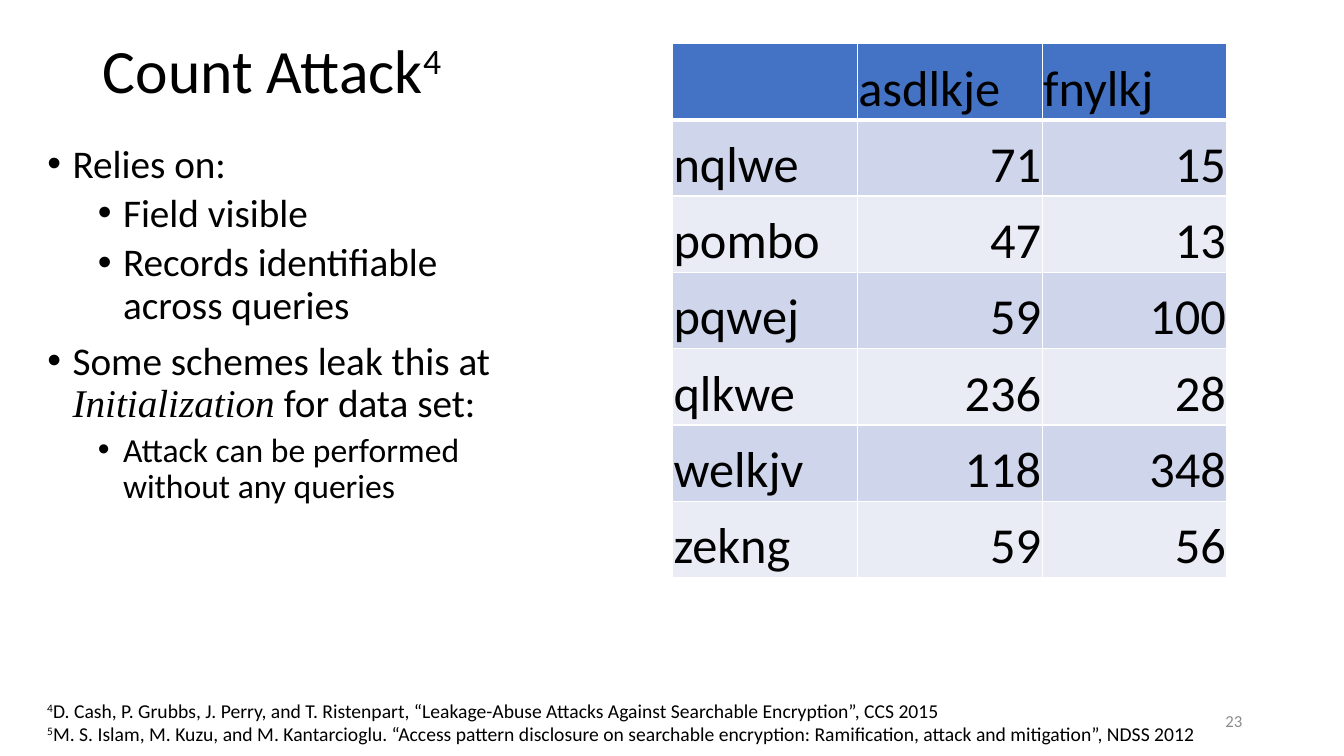
from dataclasses import dataclass

from lxml.etree import SubElement
from pptx import Presentation
from pptx.dml.color import RGBColor
from pptx.enum.text import MSO_ANCHOR as Anchor, MSO_AUTO_SIZE as AutoSize, PP_ALIGN as Align
from pptx.oxml.ns import qn
from pptx.util import Inches, Pt

BLACK = RGBColor(0x00, 0x00, 0x00)
GRAY = RGBColor(0x8C, 0x8C, 0x8C)
HEADER_BLUE = RGBColor(0x44, 0x72, 0xC4)
BANDS = (RGBColor(0xCF, 0xD5, 0xEA), RGBColor(0xE9, 0xEB, 0xF5))
BODY_FONT = "Calibri"
TERM_FONT = "Times New Roman"
BREAK = "\n"


@dataclass(frozen=True)
class Piece:
    text: str
    superscript: bool = False
    term: bool = False


@dataclass(frozen=True)
class Bullet:
    pieces: tuple[Piece, ...]
    level: int = 0
    size: int = 28


TITLE = (Piece("Count Attack"), Piece("4", superscript=True))
BULLETS = (
    Bullet((Piece("Relies on:"),)),
    Bullet((Piece("Field visible"),), 1),
    Bullet((Piece("Records identifiable "), Piece(BREAK), Piece("across queries")), 1),
    Bullet((Piece("Some schemes leak this at "), Piece("Initialization", term=True),
            Piece(" for data set:"))),
    Bullet((Piece("Attack can be performed without any queries"),), 1, 24),
)
FOOTNOTES = (
    ("4", "D. Cash, P. Grubbs, J. Perry, and T. Ristenpart, “Leakage-Abuse Attacks "
          "Against Searchable Encryption”, CCS 2015"),
    ("5", "M. S. Islam, M. Kuzu, and M. Kantarcioglu. “Access pattern disclosure on "
          "searchable encryption: Ramification, attack and mitigation”, NDSS 2012"),
)
COUNTS = (
    ("", "asdlkje", "fnylkj"),
    ("nqlwe", "71", "15"),
    ("pombo", "47", "13"),
    ("pqwej", "59", "100"),
    ("qlkwe", "236", "28"),
    ("welkjv", "118", "348"),
    ("zekng", "59", "56"),
)


def place(shape, left: float, top: float, width: float, height: float) -> None:
    shape.left, shape.top = Inches(left), Inches(top)
    shape.width, shape.height = Inches(width), Inches(height)


def write(paragraph, pieces: tuple[Piece, ...], size: int, color: RGBColor = BLACK) -> None:
    for piece in pieces:
        if piece.text == BREAK:
            paragraph.add_line_break()
            continue
        run = paragraph.add_run()
        run.text = piece.text
        run.font.name = TERM_FONT if piece.term else BODY_FONT
        run.font.size = Pt(size)
        run.font.color.rgb = color
        if piece.term:
            run.font.italic = True
        if piece.superscript:
            run.font._element.set("baseline", "30000")


def add_bullet(paragraph, bullet: Bullet, first: bool) -> None:
    paragraph.level = bullet.level
    paragraph.line_spacing = 0.9
    paragraph.space_before = Pt(0 if first else 5 if bullet.level else 10)
    properties = paragraph._p.get_or_add_pPr()
    properties.set("marL", str(Inches(0.25 + 0.5 * bullet.level)))
    properties.set("indent", str(Inches(-0.25)))
    SubElement(properties, qn("a:buFont"), typeface="Arial")
    SubElement(properties, qn("a:buChar"), char="•")
    write(paragraph, bullet.pieces, bullet.size)


def add_borders(cell, top: float, bottom: float) -> None:
    properties = cell._tc.get_or_add_tcPr()
    for side, points in (("L", 1), ("R", 1), ("T", top), ("B", bottom)):
        line = SubElement(properties, qn(f"a:ln{side}"), w=str(Pt(points)))
        fill = SubElement(line, qn("a:solidFill"))
        SubElement(fill, qn("a:srgbClr"), val="FFFFFF")


def add_count_table(slide) -> None:
    frame = slide.shapes.add_table(len(COUNTS), len(COUNTS[0]), Inches(6.67), Inches(0.43),
                                   Inches(5.5), Inches(5.3))
    table = frame.table
    table.first_row = table.horz_banding = False
    for row, values in enumerate(COUNTS):
        for column, value in enumerate(values):
            cell = table.cell(row, column)
            add_borders(cell, 3 if row == 1 else 1, 3 if row == 0 else 1)
            cell.fill.solid()
            cell.fill.fore_color.rgb = BANDS[(row - 1) % 2] if row else HEADER_BLUE
            cell.vertical_anchor = Anchor.BOTTOM
            cell.margin_left = cell.margin_right = cell.margin_top = Inches(0.01)
            cell.margin_bottom = 0
            paragraph = cell.text_frame.paragraphs[0]
            paragraph.alignment = Align.RIGHT if row and column else Align.LEFT
            if value:
                write(paragraph, (Piece(value),), 36)


def main() -> None:
    presentation = Presentation()
    presentation.slide_width, presentation.slide_height = Inches(13.33), Inches(7.5)
    slide = presentation.slides.add_slide(presentation.slide_layouts[1])

    # Title
    title = slide.shapes.title
    place(title, 0.92, 0, 11.5, 1.45)
    title.text_frame.auto_size = AutoSize.NONE
    title.text_frame.vertical_anchor = Anchor.MIDDLE
    heading = title.text_frame.paragraphs[0]
    heading.alignment = Align.LEFT
    heading.line_spacing = 0.9
    write(heading, TITLE, 44)

    # Bullet list
    body = slide.placeholders[1]
    place(body, 0.37, 1.38, 5.36, 5.31)
    frame = body.text_frame
    frame.auto_size = AutoSize.NONE
    for index, bullet in enumerate(BULLETS):
        paragraph = frame.add_paragraph() if index else frame.paragraphs[0]
        add_bullet(paragraph, bullet, index == 0)

    # Footnotes
    notes = slide.shapes.add_textbox(Inches(0.37), Inches(6.88), Inches(11.71), Inches(0.57))
    frame = notes.text_frame
    frame.word_wrap = False
    frame.auto_size = AutoSize.SHAPE_TO_FIT_TEXT
    for index, (mark, reference) in enumerate(FOOTNOTES):
        paragraph = frame.add_paragraph() if index else frame.paragraphs[0]
        write(paragraph, (Piece(mark, superscript=True), Piece(reference)), 14)

    # Table of counts
    add_count_table(slide)

    # Slide number
    number = slide.shapes.add_textbox(Inches(9.42), Inches(6.95), Inches(3), Inches(0.4))
    number.text_frame.word_wrap = True
    number.text_frame.vertical_anchor = Anchor.MIDDLE
    paragraph = number.text_frame.paragraphs[0]
    paragraph.alignment = Align.RIGHT
    write(paragraph, (Piece("23"),), 12, GRAY)

    presentation.save("out.pptx")


if __name__ == "__main__":
    main()
